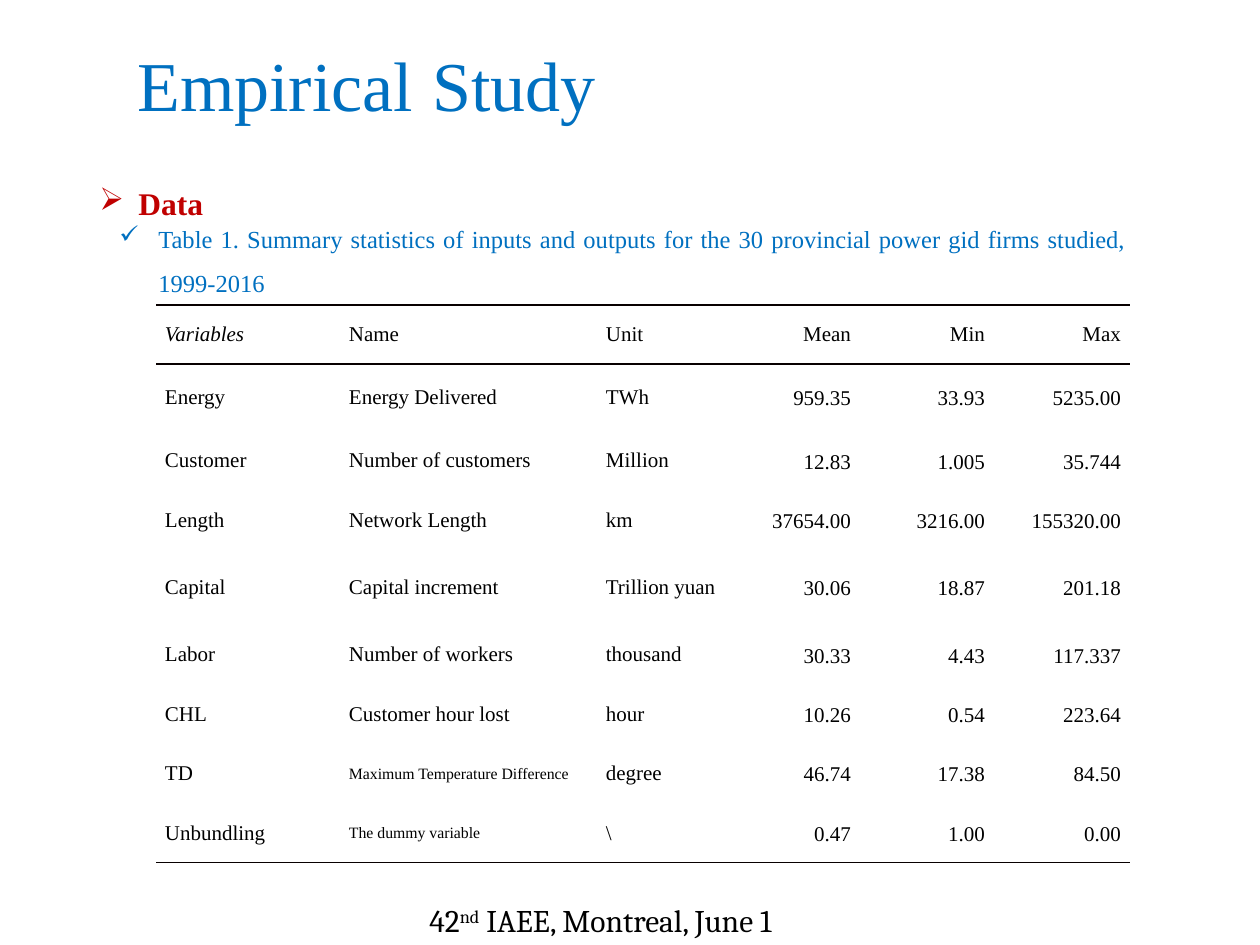
import pptx
import pptx.util
import pptx.dml.color
import pptx.enum.text
from lxml import etree

PX = 914400 / 126
FONT = "Times New Roman"
BLACK, BLUE, RED, RULE = "000000", "0070C0", "C00000", "080000"
NS = "{http://schemas.openxmlformats.org/drawingml/2006/main}"
ALIGN = pptx.enum.text.PP_ALIGN
MIDDLE = pptx.enum.text.MSO_ANCHOR.MIDDLE


def px(n):
    return pptx.util.Emu(round(n * PX))


def style(r, size, color, name=FONT):
    r.font.size = pptx.util.Pt(size)
    r.font.name = name
    r.font.color.rgb = pptx.dml.color.RGBColor.from_string(color)


prs = pptx.Presentation()
prs.slide_width, prs.slide_height = px(1260), px(945)
s = prs.slides.add_slide(prs.slide_layouts[6])

# Footer
tf = s.shapes.add_textbox(px(417), px(895), px(408), px(50)).text_frame
tf.word_wrap = False
tf.auto_size = pptx.enum.text.MSO_AUTO_SIZE.SHAPE_TO_FIT_TEXT
for text in ("42", "nd", " IAEE, Montreal, June 1"):
    r = tf.paragraphs[0].add_run()
    r.text = text
    style(r, 18, BLACK, "Cambria")
    if text == "nd":
        r._r.get_or_add_rPr().set("baseline", "30000")

# Title
tf = s.shapes.add_textbox(px(125), px(35), px(1048), px(103)).text_frame
tf.word_wrap = True
tf.vertical_anchor = MIDDLE
p = tf.paragraphs[0]
p.line_spacing = 0.9
for text, size, color in (("Empirical", 40, BLUE), (" ", 44, BLACK), ("Study", 40, BLUE)):
    r = p.add_run()
    r.text = text
    style(r, size, color)

# Heading and table caption
caption = ("Table 1. Summary statistics of inputs and outputs for the 30 "
           "provincial power gid firms studied, 1999-2016")
for box, bullet, text, size, color, bold in (
    ((87, 159, 1070, 63), "➢", "Data", 18, RED, True),
    ((107, 203, 1032, 102), "✓", caption, 14, BLUE, False),
):
    tf = s.shapes.add_textbox(*map(px, box)).text_frame
    tf.word_wrap = True
    tf.auto_size = pptx.enum.text.MSO_AUTO_SIZE.SHAPE_TO_FIT_TEXT
    tf.text = text
    p = tf.paragraphs[0]
    p.alignment = ALIGN.JUSTIFY
    p.line_spacing = 1.5
    pPr = p._p.get_or_add_pPr()
    pPr.set("marL", str(px(39)))
    pPr.set("indent", str(px(-39)))
    etree.SubElement(pPr, NS + "buChar", char=bullet)
    style(p.runs[0], size, color)
    p.runs[0].font.bold = bold

# Summary statistics table
rows = [
    ("Variables", "Name", "Unit", "Mean", "Min", "Max"),
    ("Energy", "Energy Delivered", "TWh", "959.35", "33.93", "5235.00"),
    ("Customer", "Number of customers", "Million", "12.83", "1.005", "35.744"),
    ("Length", "Network Length", "km", "37654.00", "3216.00", "155320.00"),
    ("Capital", "Capital increment", "Trillion yuan", "30.06", "18.87", "201.18"),
    ("Labor", "Number of workers", "thousand", "30.33", "4.43", "117.337"),
    ("CHL", "Customer hour lost", "hour", "10.26", "0.54", "223.64"),
    ("TD", "Maximum Temperature Difference", "degree", "46.74", "17.38", "84.50"),
    ("Unbundling", "The dummy variable", "\\", "0.47", "1.00", "0.00"),
]
widths = (184, 257, 129, 134, 134, 136)
heights = (59, 67, 60, 59, 75, 60, 59, 60, 59)
last = len(rows) - 1
table = s.shapes.add_table(len(rows), len(widths), px(156), px(305),
                           px(sum(widths)), px(sum(heights))).table
table.first_row = table.horz_banding = False
for col, width in zip(table.columns, widths):
    col.width = px(width)
for i, (row, height) in enumerate(zip(rows, heights)):
    table.rows[i].height = px(height)
    for j, text in enumerate(row):
        cell = table.cell(i, j)
        cell.margin_left = cell.margin_right = px(9)
        cell.margin_top = cell.margin_bottom = 0
        cell.vertical_anchor = MIDDLE
        cell.text_frame.text = text
        p = cell.text_frame.paragraphs[0]
        if j > 2:
            p.alignment = ALIGN.RIGHT
            p.line_spacing = 1.1 if i else 1.0
        style(p.runs[0], 9 if j == 1 and i >= last - 1 else 12, BLACK)
        p.runs[0].font.italic = i == j == 0

        # Rules above and below the header and under the last row
        ruled = {"lnT": i <= 1, "lnB": i in (0, last)}
        tcPr = cell._tc.get_or_add_tcPr()
        for side in ("lnL", "lnR", "lnT", "lnB"):
            ln = etree.SubElement(tcPr, NS + side, w="12700")
            if ruled.get(side):
                fill = etree.SubElement(ln, NS + "solidFill")
                etree.SubElement(fill, NS + "srgbClr", val=RULE)
            else:
                etree.SubElement(ln, NS + "noFill")
        cell.fill.background()

prs.save("out.pptx")
